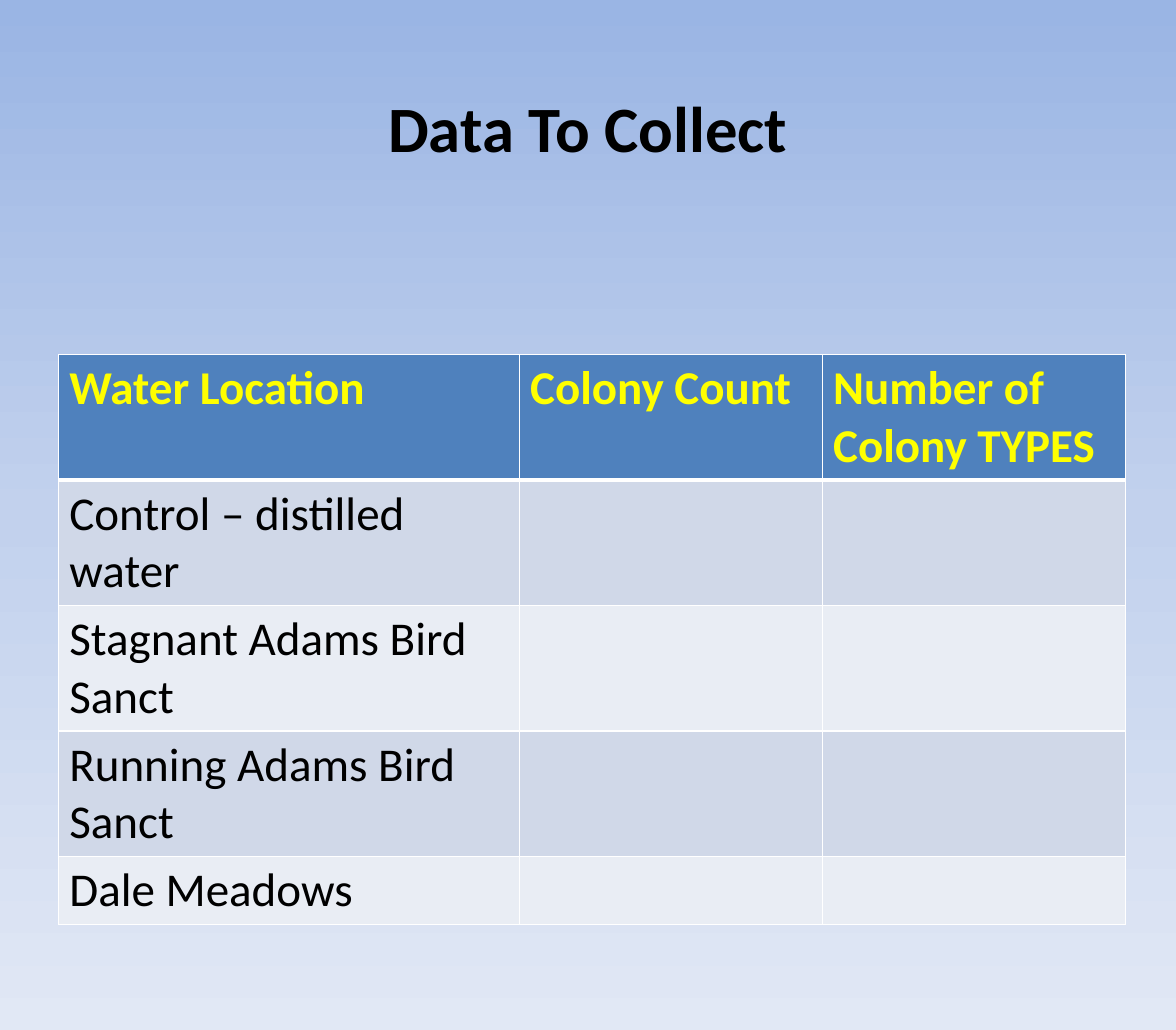
from copy import deepcopy

from lxml import etree
from pptx import Presentation
from pptx import util as u
from pptx.dml.color import RGBColor
from pptx.enum import text
from pptx.oxml.ns import qn

FONT = "Calibri"
BLACK = RGBColor(0x00, 0x00, 0x00)
WHITE = RGBColor(0xFF, 0xFF, 0xFF)
YELLOW = RGBColor(0xFF, 0xFF, 0x00)
HEADER_BLUE = RGBColor(0x4F, 0x81, 0xBD)
BANDS = (RGBColor(0xD0, 0xD8, 0xE8), RGBColor(0xE9, 0xED, 0xF4))
SKY = (RGBColor(0x9A, 0xB5, 0xE4), RGBColor(0xC2, 0xD1, 0xED), RGBColor(0xE1, 0xE8, 0xF5))

COLUMN_WIDTHS = (11.06, 7.27, 7.27)
ROW_HEIGHTS = (3.01, 3.01, 3.01, 3.01, 1.64)
HEADINGS = ("Water Location", "Colony Count", "Number of Colony TYPES")
LOCATIONS = (
    "Control – distilled water",
    "Stagnant Adams Bird Sanct",
    "Running Adams Bird Sanct",
    "Dale Meadows",
)


class SlideBuilder:
    def __init__(self, slide, font_name):
        self.slide = slide
        self.font_name = font_name

    def background(self, colors):
        fill = self.slide.background.fill
        fill.gradient()
        fill.gradient_angle = 270
        stop_list = fill._fill._gradFill.find(qn("a:gsLst"))
        stop_list.append(deepcopy(stop_list[0]))
        for index, (stop, color) in enumerate(zip(fill.gradient_stops, colors)):
            stop.position = index / (len(colors) - 1)
            stop.color.rgb = color

    def style(self, paragraph, size, color, bold):
        font = paragraph.font
        font.name, font.size, font.bold = self.font_name, u.Pt(size), bold
        font.color.rgb = color

    def title(self, wording, left, top, width, height):
        shape = self.slide.shapes.add_textbox(u.Cm(left), u.Cm(top), u.Cm(width), u.Cm(height))
        frame = shape.text_frame
        frame.word_wrap = True
        frame.vertical_anchor = text.MSO_ANCHOR.MIDDLE
        paragraph = frame.paragraphs[0]
        paragraph.text = wording
        paragraph.alignment = text.PP_ALIGN.CENTER
        self.style(paragraph, 44, BLACK, True)

    def borders(self, cell, top, bottom):
        properties = cell._tc.get_or_add_tcPr()
        for side, points in (("L", 1), ("R", 1), ("T", top), ("B", bottom)):
            line = etree.SubElement(properties, qn(f"a:ln{side}"), w=str(u.Pt(points)))
            solid = etree.SubElement(line, qn("a:solidFill"))
            etree.SubElement(solid, qn("a:srgbClr"), val=str(WHITE))

    def table(self, rows, left, top, widths, heights):
        table = self.slide.shapes.add_table(
            len(rows), len(widths), u.Cm(left), u.Cm(top),
            u.Cm(sum(widths)), u.Cm(sum(heights))).table
        for column, width in zip(table.columns, widths):
            column.width = u.Cm(width)
        for index, (row, height, wordings) in enumerate(zip(table.rows, heights, rows)):
            row.height = u.Cm(height)
            header = index == 0
            for cell, wording in zip(row.cells, wordings):
                self.borders(cell, 3 if index == 1 else 1, 3 if header else 1)
                cell.fill.solid()
                cell.fill.fore_color.rgb = HEADER_BLUE if header else BANDS[(index - 1) % 2]
                paragraph = cell.text_frame.paragraphs[0]
                paragraph.text = wording
                self.style(paragraph, 32, YELLOW if header else BLACK, header)


def main():
    presentation = Presentation()
    # The page measures a whole number of points
    presentation.slide_width, presentation.slide_height = u.Pt(800), u.Pt(701)
    slide = presentation.slides.add_slide(presentation.slide_layouts[6])
    builder = SlideBuilder(slide, FONT)

    # Background and title
    builder.background(SKY)
    builder.title("Data To Collect", 1.41, 0.99, 25.4, 4.11)

    # Data table with empty cells to fill in
    rows = [HEADINGS] + [(location, "", "") for location in LOCATIONS]
    builder.table(rows, 1.41, 8.52, COLUMN_WIDTHS, ROW_HEIGHTS)

    presentation.save("out.pptx")


if __name__ == "__main__":
    main()
